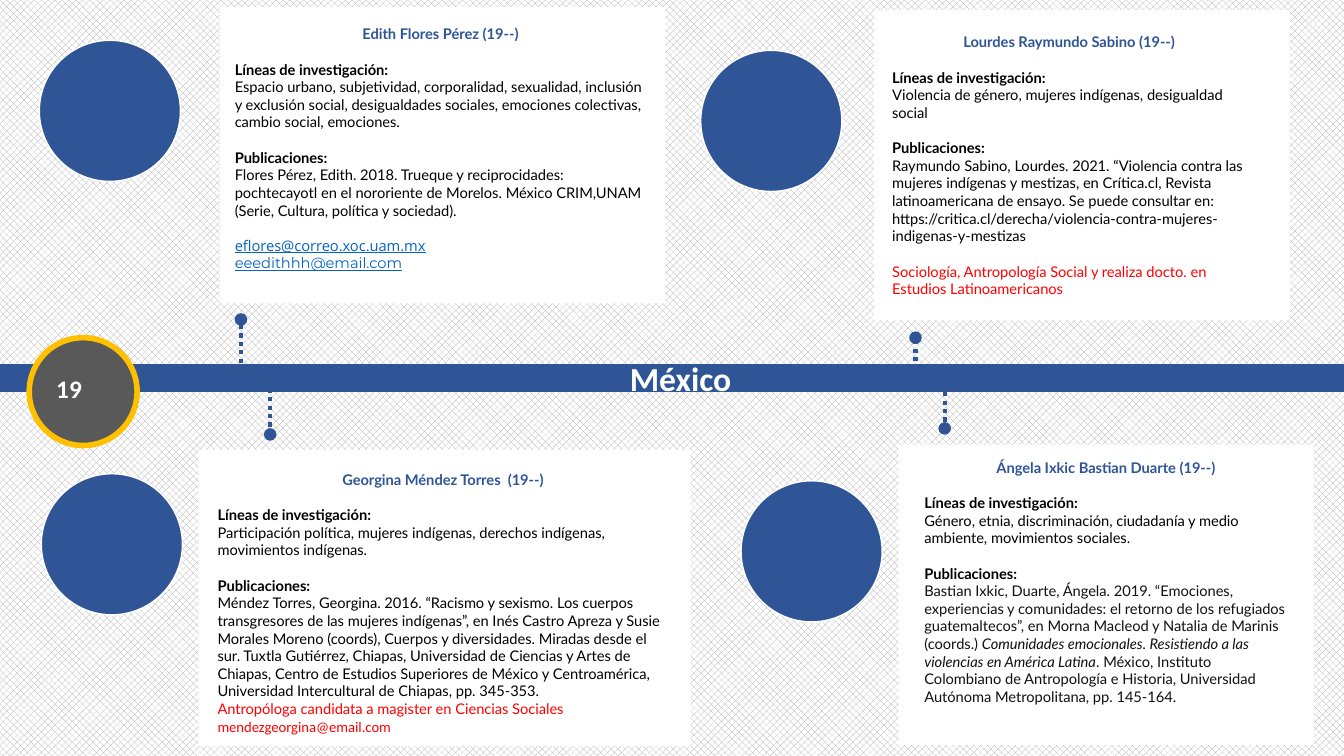
"""Builds a slide with four researcher profiles along a timeline for Mexico."""
from lxml.etree import SubElement
from pptx import Presentation
from pptx.dml.color import RGBColor
from pptx.enum.dml import MSO_LINE, MSO_PATTERN
from pptx.enum.shapes import MSO_CONNECTOR, MSO_SHAPE
from pptx.enum.text import MSO_ANCHOR, MSO_AUTO_SIZE, PP_ALIGN
from pptx.oxml.ns import qn
from pptx.util import Inches, Pt

COLORS = {
    "blue": "2F5597", "white": "FFFFFF", "gray": "595959", "gold": "FFC000",
    "black": "000000", "ink": "111111", "red": "FF0000", "link": "0563C1",
    "hatch": "A6A6A6",
}
BODY_SIZE = 10.5
SECTION_GAP = 12.6
PORTRAIT_SIZE = 1.4

PROFILES = [
    {
        "name": "Lourdes Raymundo Sabino (19--)",
        "card": (8.67, 0.1, 4.12, 3.08),
        "body": (8.75, 0.28, 3.71, 2.75),
        "portrait": (6.95, 0.5),
        "marker": (9.08, 3.75, 3.35),
        "research": "Violencia de género, mujeres indígenas, desigualdad social",
        "publication": [(
            "Raymundo Sabino, Lourdes. 2021. “Violencia contra las mujeres indígenas y "
            "mestizas, en Crítica.cl, Revista latinoamericana de ensayo. Se puede consultar "
            "en: https://critica.cl/derecha/violencia-contra-mujeres-indigenas-y-mestizas", {})],
        "closing": [
            ("Sociología, Antropología Social y realiza docto. en Estudios Latinoamericanos",
             {"color": "red", "before": SECTION_GAP})],
    },
    {
        "name": "Georgina Méndez Torres  (19--)",
        "card": (1.97, 4.46, 4.88, 2.94),
        "body": (2.06, 4.62, 4.67, 2.75),
        "portrait": (0.41, 4.7),
        "marker": (2.68, 3.69, 4.31),
        "research": "Participación política, mujeres indígenas, derechos indígenas, "
                    "movimientos indígenas.",
        "publication": [(
            "Méndez Torres, Georgina. 2016. “Racismo y sexismo. Los cuerpos transgresores de "
            "las mujeres indígenas”, en Inés Castro Apreza y Susie Morales Moreno (coords), "
            "Cuerpos y diversidades. Miradas desde el sur. Tuxtla Gutiérrez, Chiapas, "
            "Universidad de Ciencias y Artes de Chiapas, Centro de Estudios Superiores de "
            "México y Centroamérica, Universidad Intercultural de Chiapas, pp. 345-353.", {})],
        "closing": [
            ("Antropóloga candidata a magister en Ciencias Sociales", {"color": "red"}),
            ("mendezgeorgina@email.com", {"color": "red", "font": "Calibri"})],
    },
    {
        "name": "Ángela Ixkic Bastian Duarte (19--)",
        "card": (8.91, 4.41, 4.12, 2.98),
        "body": (9.07, 4.5, 3.8, 2.75),
        "portrait": (7.35, 4.77),
        "marker": (9.37, 3.64, 4.25),
        "research": "Género, etnia, discriminación, ciudadanía y medio ambiente, "
                    "movimientos sociales.",
        "publication": [
            ("Bastian Ixkic, Duarte, Ángela. 2019. “Emociones, experiencias y comunidades: el "
             "retorno de los refugiados guatemaltecos”, en Morna Macleod y Natalia de Marinis "
             "(coords.) ", {"color": "ink"}),
            ("Comunidades emocionales. Resistiendo a las violencias en América Latina",
             {"color": "ink", "italic": True}),
            (". México, Instituto Colombiano de Antropología e Historia, Universidad Autónoma "
             "Metropolitana, pp. 145-164.", {"color": "ink"})],
        "closing": [],
    },
    {
        "name": "Edith Flores Pérez (19--)",
        "card": (2.18, 0.07, 4.42, 2.94),
        "body": (2.23, 0.2, 4.28, 2.57),
        "portrait": (0.39, 0.4),
        "marker": (2.39, 3.6, 3.17),
        "research": "Espacio urbano, subjetividad, corporalidad, sexualidad, inclusión y "
                    "exclusión social, desigualdades sociales, emociones colectivas, cambio "
                    "social, emociones.",
        "publication": [(
            "Flores Pérez, Edith. 2018. Trueque y reciprocidades: pochtecayotl en el nororiente "
            "de Morelos. México CRIM,UNAM (Serie, Cultura, política y sociedad).", {})],
        "closing": [
            ("eflores@correo.xoc.uam.mx", {"color": "link", "font": "Open Sans",
                                           "underline": True, "before": SECTION_GAP}),
            ("eeedithhh@email.com", {"color": "link", "font": "Montserrat",
                                     "underline": True})],
    },
]


def rgb(name):
    """Return the palette colour of that name."""
    return RGBColor.from_string(COLORS[name])


def write(paragraph, text, size=BODY_SIZE, font="Lato", color="black", bold=False,
          italic=False, underline=False, align=PP_ALIGN.LEFT, before=0):
    """Add a formatted run to a paragraph and set the paragraph's layout."""
    run = paragraph.add_run()
    run.text = text
    run.font.size = Pt(size)
    run.font.name = font
    run.font.color.rgb = rgb(color)
    run.font.bold = bold
    run.font.italic = italic
    run.font.underline = underline
    paragraph.alignment = align
    if before:
        paragraph.space_before = Pt(before)


def add_text_area(slide, box):
    """Add a wrapping text box and return its text frame."""
    frame = slide.shapes.add_textbox(*map(Inches, box)).text_frame
    frame.word_wrap = True
    return frame


def add_figure(slide, kind, box, fill, outline=None, width=1):
    """Add a flat preset shape with an optional outline."""
    figure = slide.shapes.add_shape(kind, *map(Inches, box))
    figure.shadow.inherit = False
    figure.fill.solid()
    figure.fill.fore_color.rgb = rgb(fill)
    if outline:
        figure.line.color.rgb = rgb(outline)
        figure.line.width = Pt(width)
    else:
        figure.line.fill.background()


def add_rule(slide, start, end, width):
    """Add a straight blue line without a shadow."""
    rule = slide.shapes.add_connector(MSO_CONNECTOR.STRAIGHT, *map(Inches, start + end))
    rule.line.color.rgb = rgb("blue")
    rule.line.width = Pt(width)
    SubElement(rule.element.spPr, qn("a:effectLst"))
    return rule


def add_marker(slide, x, start, end):
    """Add a dotted line that ends in a round dot."""
    marker = add_rule(slide, (x, start), (x, end), 3)
    marker.line.dash_style = MSO_LINE.ROUND_DOT
    SubElement(marker.line._get_or_add_ln(), qn("a:tailEnd"), type="oval")


def add_title_band(slide):
    """Place the title over the blue band."""
    band = add_rule(slide, (0, 3.75), (13.33, 3.75), 20)
    title = slide.shapes.title
    title.element.addprevious(band.element)
    title.left, title.top, title.width, title.height = map(Inches, (6.07, 3.5, 1.36, 0.5))
    frame = title.text_frame
    frame.auto_size = MSO_AUTO_SIZE.NONE
    frame.word_wrap = False
    frame.vertical_anchor = MSO_ANCHOR.TOP
    write(frame.paragraphs[0], "México", size=24, font="Calibri", color="white",
          bold=True, align=PP_ALIGN.CENTER)


def add_number_badge(slide):
    """Add the gold-ringed badge with the slide number."""
    add_figure(slide, MSO_SHAPE.OVAL, (0.29, 3.35, 1.07, 1.07), "gray", "gold", 4)
    number = add_text_area(slide, (0.46, 3.65, 0.74, 0.4))
    write(number.paragraphs[0], "19", size=18, font="Calibri", color="white", bold=True)


def add_profile(slide, profile):
    """Add one researcher's card, portrait, marker and text."""
    add_figure(slide, MSO_SHAPE.RECTANGLE, profile["card"], "white")
    add_figure(slide, MSO_SHAPE.OVAL, profile["portrait"] + (PORTRAIT_SIZE, PORTRAIT_SIZE),
               "blue", "white")
    add_marker(slide, *profile["marker"])
    body = add_text_area(slide, profile["body"])
    write(body.paragraphs[0], profile["name"], color="blue", bold=True,
          align=PP_ALIGN.CENTER)
    sections = [("Líneas de investigación:", [(profile["research"], {})]),
                ("Publicaciones:", profile["publication"])]
    for heading, passages in sections:
        write(body.add_paragraph(), heading, bold=True, before=SECTION_GAP)
        passage_line = body.add_paragraph()
        for text, style in passages:
            write(passage_line, text, **style)
    for text, style in profile["closing"]:
        write(body.add_paragraph(), text, **style)


def main():
    """Build and save the slide."""
    deck = Presentation()
    deck.slide_width, deck.slide_height = Inches(13.33), Inches(7.5)
    slide = deck.slides.add_slide(deck.slide_layouts[5])
    backdrop = slide.background.fill
    backdrop.patterned()
    backdrop.pattern = MSO_PATTERN.PERCENT_50
    backdrop.fore_color.rgb = rgb("hatch")
    backdrop.back_color.rgb = rgb("white")
    add_title_band(slide)
    add_number_badge(slide)
    for profile in PROFILES:
        add_profile(slide, profile)
    deck.save("out.pptx")


if __name__ == "__main__":
    main()
